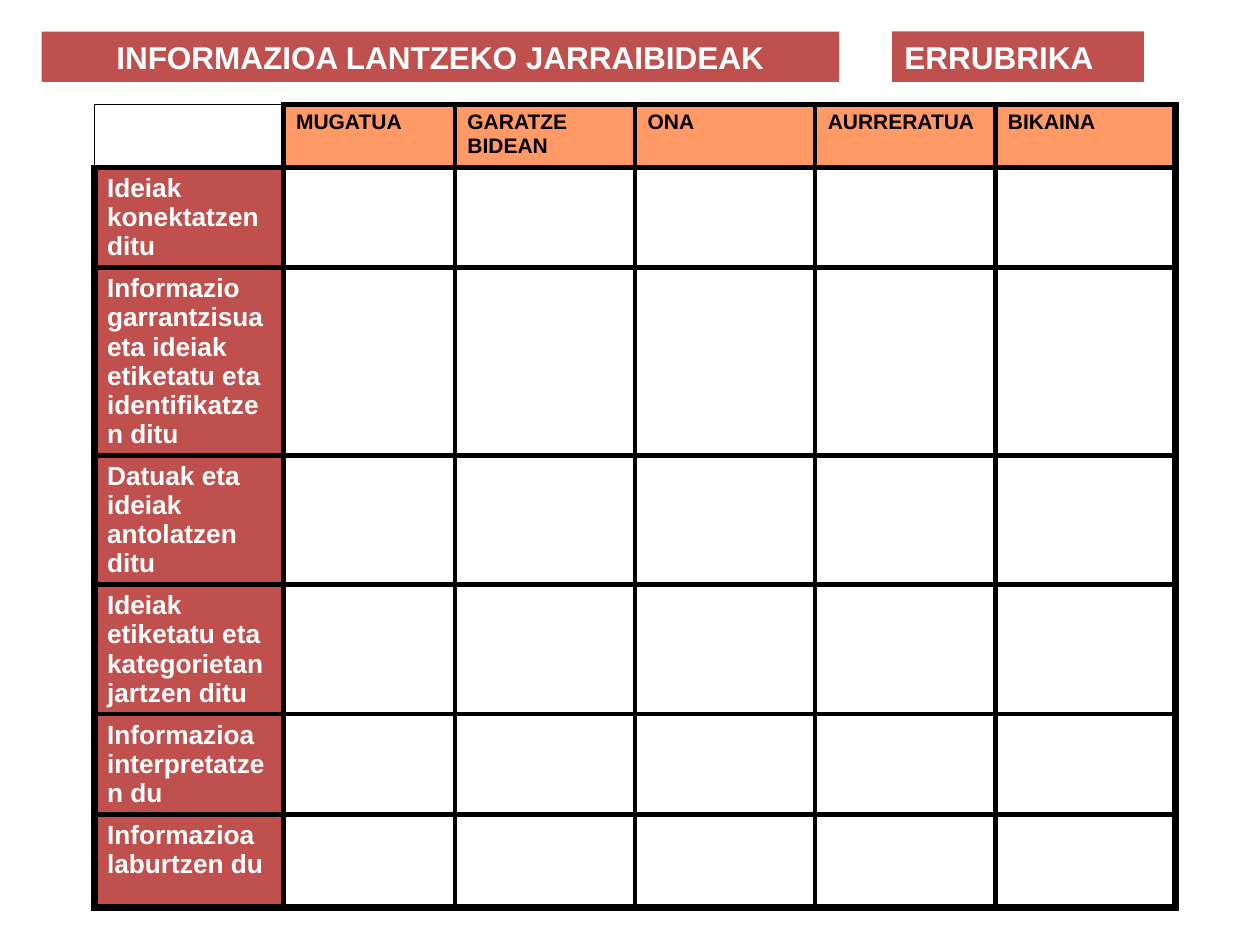
from lxml.etree import SubElement
from pptx import Presentation
from pptx.dml.color import RGBColor
from pptx.enum.shapes import MSO_SHAPE as Shape
from pptx.enum.text import MSO_ANCHOR as Anchor, MSO_AUTO_SIZE as AutoSize, PP_ALIGN as Align
from pptx.oxml.ns import qn
from pptx.util import Inches, Pt

RED, ORANGE, BLACK, WHITE = "C0504D", "FF9966", "000000", "FFFFFF"
THIN, INNER, OUTER = 0.5, 3, 4.5
COLUMN_WIDTHS = [1.5, 1.36, 1.43, 1.43, 1.43, 1.43]
ROW_HEIGHTS = [0.5, 0.74, 1.32, 0.74, 0.9, 0.74, 0.74]
LEVELS = ["MUGATUA", "GARATZE BIDEAN", "ONA", "AURRERATUA", "BIKAINA"]
CRITERIA = [
    "Ideiak konektatzen ditu",
    "Informazio garrantzisua eta ideiak etiketatu eta identifikatzen ditu",
    "Datuak eta ideiak antolatzen ditu",
    "Ideiak etiketatu eta kategorietan jartzen ditu",
    "Informazioa interpretatzen du",
    "Informazioa laburtzen du",
]


def set_values(target, values):
    """Set every attribute named in a dict of values."""
    for name, value in values.items():
        setattr(target, name, value)


def set_fill(target, color):
    """Fill a shape or cell with a hex colour, or leave it clear."""
    if color:
        target.fill.solid()
        target.fill.fore_color.rgb = RGBColor.from_string(color)
    else:
        target.fill.background()


def write_text(text_frame, text, size, color, align=Align.LEFT):
    """Write one bold Arial paragraph."""
    paragraph = text_frame.paragraphs[0]
    paragraph.alignment = align
    run = paragraph.add_run()
    run.text = text
    set_values(run.font, {"name": "Arial", "size": Pt(size), "bold": True})
    run.font.color.rgb = RGBColor.from_string(color)


def format_banner(shape, text, left, width, align):
    """Turn a shape into a red heading banner."""
    set_values(shape, {"left": Inches(left), "top": Inches(0.25),
                       "width": Inches(width), "height": Inches(0.4)})
    set_fill(shape, RED)
    shape.line.fill.background()
    set_values(shape.text_frame, {
        "word_wrap": True, "auto_size": AutoSize.NONE, "vertical_anchor": Anchor.MIDDLE,
        "margin_left": Inches(0.1), "margin_right": Inches(0.1),
        "margin_top": Inches(0.05), "margin_bottom": Inches(0.05)})
    write_text(shape.text_frame, text, 18, WHITE, align)


def set_borders(cell, widths):
    """Draw black cell borders from a dict of side and point width."""
    properties = cell._tc.get_or_add_tcPr()
    for side, width in widths.items():
        line = SubElement(properties, qn(f"a:ln{side}"), w=str(Pt(width)))
        fill = SubElement(line, qn("a:solidFill"))
        SubElement(fill, qn("a:srgbClr"), val=BLACK)


def border_widths(row, column):
    """Return the border widths for a cell by its place in the grid."""
    corner = row == 0 and column == 0
    return {
        "L": THIN if corner else OUTER if column == 0 else INNER,
        "R": OUTER if column == len(LEVELS) else INNER,
        "T": THIN if corner else INNER,
        "B": OUTER if row == len(CRITERIA) else INNER,
    }


def format_cell(cell, row, column):
    """Give a cell its borders, fill, margins and heading text."""
    set_borders(cell, border_widths(row, column))
    set_values(cell, {"margin_left": Inches(0.1), "margin_right": Inches(0.1),
                      "margin_top": Inches(0.05), "margin_bottom": Inches(0.05)})
    if row == 0 and column > 0:
        set_fill(cell, ORANGE)
        write_text(cell.text_frame, LEVELS[column - 1], 12, BLACK)
    elif row > 0 and column == 0:
        set_fill(cell, RED)
        write_text(cell.text_frame, CRITERIA[row - 1], 15, WHITE)
    else:
        set_fill(cell, None)


def add_rubric(slide):
    """Add the table of criteria against levels."""
    table = slide.shapes.add_table(
        len(ROW_HEIGHTS), len(COLUMN_WIDTHS), Inches(0.75), Inches(0.83),
        Inches(sum(COLUMN_WIDTHS)), Inches(sum(ROW_HEIGHTS))).table
    set_values(table, {"first_row": False, "horz_banding": False})
    for column, width in zip(table.columns, COLUMN_WIDTHS):
        column.width = Inches(width)
    for row, height in enumerate(ROW_HEIGHTS):
        table.rows[row].height = Inches(height)
        for column in range(len(COLUMN_WIDTHS)):
            format_cell(table.cell(row, column), row, column)


def main():
    """Build the rubric slide and save it."""
    presentation = Presentation()
    set_values(presentation, {"slide_width": Inches(10), "slide_height": Inches(7.5)})
    slide = presentation.slides.add_slide(presentation.slide_layouts[5])
    format_banner(slide.shapes.title, "INFORMAZIOA LANTZEKO JARRAIBIDEAK",
                  0.33, 6.33, Align.CENTER)
    add_rubric(slide)
    label = slide.shapes.add_shape(Shape.RECTANGLE, 0, 0, 0, 0)
    label.shadow.inherit = False
    format_banner(label, "ERRUBRIKA", 7.08, 2, Align.LEFT)
    presentation.save("out.pptx")


if __name__ == "__main__":
    main()
